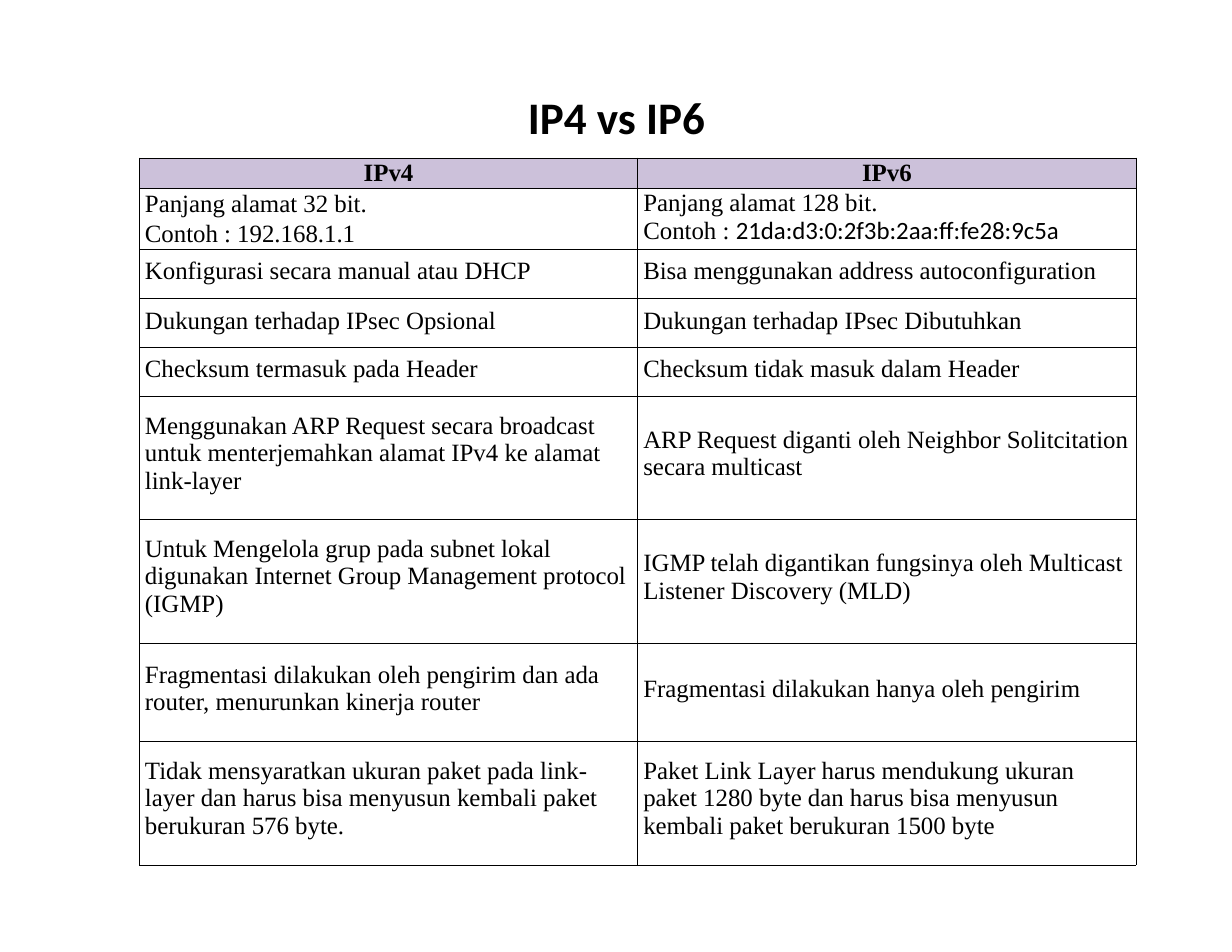
"""Build a slide that compares IPv4 with IPv6 in a table."""
from dataclasses import dataclass

from lxml.etree import SubElement
from pptx import Presentation
from pptx.dml.color import RGBColor
from pptx.enum.text import MSO_ANCHOR, PP_ALIGN
from pptx.oxml.ns import qn
from pptx.util import Pt

SERIF = "Times New Roman"
SANS = "Calibri"
BLACK = "000000"
LILAC = "CCC1DA"
COLUMN_WIDTH = 320.4


@dataclass
class Entry:
    """One cell, as paragraphs of (text, font) spans."""
    paragraphs: list
    top: float = 0
    line_spacing: float | None = None


@dataclass
class Row:
    """One table row with its height and cells."""
    height: float
    entries: list
    right: float = 0
    header: bool = False


def plain(text: str, top: float = 0, line_spacing: float | None = None) -> Entry:
    """Return an entry with one serif span for each line of text."""
    return Entry([[(line, SERIF)] for line in text.split("\n")], top, line_spacing)


ROWS = [
    Row(19.4, [plain("IPv4", 0, 18.5), plain("IPv6", 0, 18.5)], header=True),
    Row(39.2, [
        plain("Panjang alamat 32 bit.\nContoh : 192.168.1.1", 0, 19.2),
        Entry([[("Panjang alamat 128 bit.", SERIF)],
               [("Contoh : ", SERIF), ("21da:d3:0:2f3b:2aa:ff:fe28:9c5a", SANS)]], 0, 18.6),
    ]),
    Row(31.6, [plain("Konfigurasi secara manual atau DHCP", 5.3),
               plain("Bisa menggunakan address autoconfiguration", 5.3)]),
    Row(31.6, [plain("Dukungan terhadap IPsec Opsional", 5.5),
               plain("Dukungan terhadap IPsec Dibutuhkan", 5.5)]),
    Row(31.6, [plain("Checksum termasuk pada Header", 5.3),
               plain("Checksum tidak masuk dalam Header", 5.3)]),
    Row(79.2, [
        plain("Menggunakan ARP Request secara broadcast untuk menterjemahkan "
              "alamat IPv4 ke alamat link-layer", 9.9),
        plain("ARP Request diganti oleh Neighbor Solitcitation secara multicast", 19),
    ]),
    Row(79.2, [
        plain("Untuk Mengelola grup pada subnet lokal digunakan Internet Group "
              "Management protocol (IGMP)", 9.9),
        plain("IGMP telah digantikan fungsinya oleh Multicast Listener Discovery (MLD)", 19),
    ]),
    Row(63.5, [
        plain("Fragmentasi dilakukan oleh pengirim dan ada router, menurunkan "
              "kinerja router", 11.7),
        plain("Fragmentasi dilakukan hanya oleh pengirim", 20.5),
    ]),
    Row(79.2, [
        plain("Tidak mensyaratkan ukuran paket pada link- layer dan harus bisa "
              "menyusun kembali paket berukuran 576 byte.", 9.9),
        plain("Paket Link Layer harus mendukung ukuran paket 1280 byte dan harus "
              "bisa menyusun kembali paket berukuran 1500 byte", 9.9),
    ], right=10),
]


def color(value: str) -> RGBColor:
    """Turn a hex string into a colour."""
    return RGBColor.from_string(value)


def apply(target: object, values: dict) -> None:
    """Set each attribute in values on the target."""
    for name, value in values.items():
        setattr(target, name, value)


def add_span(para: object, text: str, face: str, size: float, bold: bool) -> None:
    """Add a formatted black span to a paragraph."""
    span = para.add_run()
    span.text = text
    apply(span.font, {"name": face, "size": Pt(size), "bold": bold})
    span.font.color.rgb = color(BLACK)


def add_borders(cell: object, width: float) -> None:
    """Draw a solid line on each side of a cell."""
    properties = cell._tc.get_or_add_tcPr()
    for side in ("lnL", "lnR", "lnT", "lnB"):
        line = SubElement(properties, qn(f"a:{side}"), w=str(Pt(width)))
        fill = SubElement(line, qn("a:solidFill"))
        SubElement(fill, qn("a:srgbClr"), val=BLACK)


def fill_cell(cell: object, entry: Entry, row: Row) -> None:
    """Write an entry into a cell and format it."""
    apply(cell, {
        "margin_left": Pt(0 if row.header else 3.6),
        "margin_right": Pt(row.right),
        "margin_top": Pt(entry.top),
        "margin_bottom": Pt(0),
        "vertical_anchor": MSO_ANCHOR.TOP,
    })
    add_borders(cell, 0.5)
    if row.header:
        cell.fill.solid()
        cell.fill.fore_color.rgb = color(LILAC)
    else:
        cell.fill.background()
    frame = cell.text_frame
    for index, spans in enumerate(entry.paragraphs):
        para = frame.add_paragraph() if index else frame.paragraphs[0]
        para.alignment = PP_ALIGN.CENTER if row.header else PP_ALIGN.LEFT
        if entry.line_spacing:
            para.line_spacing = Pt(entry.line_spacing)
        for text, face in spans:
            add_span(para, text, face, 16, row.header)


def add_title(page: object, text: str) -> None:
    """Place and format the slide title."""
    box = page.shapes.title
    apply(box, {"left": Pt(338.4), "top": Pt(56.2), "width": Pt(116), "height": Pt(36.7)})
    frame = box.text_frame
    apply(frame, {
        "margin_left": Pt(0), "margin_right": Pt(0),
        "margin_top": Pt(1), "margin_bottom": Pt(0),
        "vertical_anchor": MSO_ANCHOR.TOP, "word_wrap": False,
    })
    para = frame.paragraphs[0]
    para.alignment = PP_ALIGN.CENTER
    add_span(para, text, SANS, 29, True)


def add_comparison(page: object, rows: list[Row]) -> None:
    """Add the comparison table."""
    height = sum(row.height for row in rows)
    table = page.shapes.add_table(
        len(rows), 2, Pt(89.6), Pt(101.6), Pt(2 * COLUMN_WIDTH), Pt(height)).table
    apply(table, {"first_row": False, "horz_banding": False})
    for column in table.columns:
        column.width = Pt(COLUMN_WIDTH)
    for index, row in enumerate(rows):
        table.rows[index].height = Pt(row.height)
        for cell, entry in zip(table.rows[index].cells, row.entries):
            fill_cell(cell, entry, row)


def main() -> None:
    """Build and save the deck."""
    deck = Presentation()
    apply(deck, {"slide_width": Pt(792), "slide_height": Pt(612)})
    page = deck.slides.add_slide(deck.slide_layouts[5])
    add_title(page, "IP4 vs IP6")
    add_comparison(page, ROWS)
    deck.save("out.pptx")


if __name__ == "__main__":
    main()
